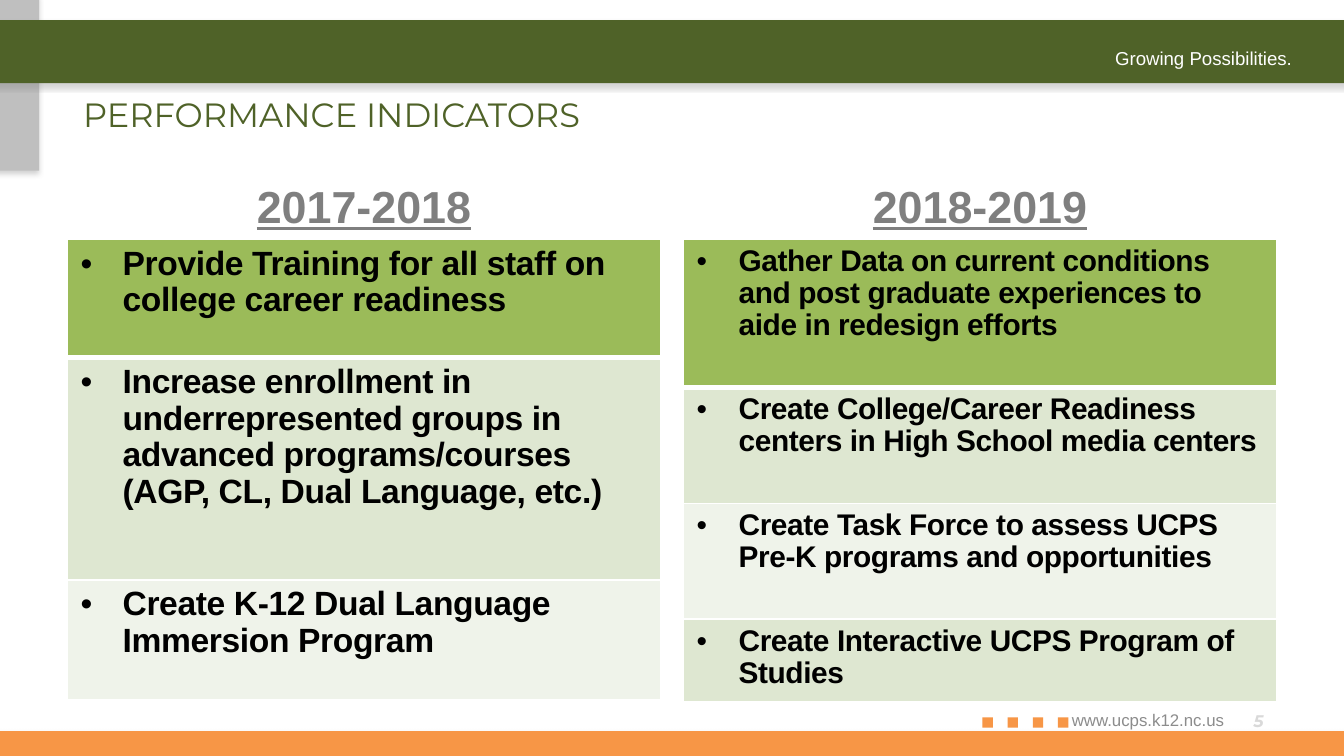
"""Build the performance indicators slide with two yearly tables."""
from lxml import etree
from pptx import Presentation
from pptx import util as u
from pptx.dml.color import RGBColor
from pptx.enum import shapes, text
from pptx.oxml import ns

Pt = u.Pt
GREEN, ORANGE, WHITE = "4F6228", "F79646", "FFFFFF"
ROW_FILLS = ["9BBB59", "DEE7D1", "EFF3EA", "DEE7D1"]


def colour(value):
    return RGBColor.from_string(value)


def child(parent, tag, **attributes):
    return etree.SubElement(parent, ns.qn(tag), {k: str(v) for k, v in attributes.items()})


class Painter:
    def __init__(self, slide, font="Arial"):
        self.slide, self.font = slide, font

    def style(self, span, size, ink, font=None, bold=False, italic=False, underline=False):
        face = span.font
        face.name, face.size = font or self.font, Pt(size)
        face.color.rgb = colour(ink)
        face.bold, face.italic, face.underline = bold, italic, underline

    def bar(self, left, top, width, height, fill, shadow=False):
        box = self.slide.shapes.add_shape(
            shapes.MSO_SHAPE.RECTANGLE, Pt(left), Pt(top), Pt(width), Pt(height))
        box.fill.solid()
        box.fill.fore_color.rgb = colour(fill)
        box.line.fill.background()
        box.shadow.inherit = False
        if shadow:
            effects = box._element.spPr.find(ns.qn("a:effectLst"))
            outer = child(effects, "a:outerShdw", blurRad=Pt(3.1), dist=Pt(1.8),
                          dir=5400000, rotWithShape=0)
            child(child(outer, "a:srgbClr", val="808080"), "a:alpha", val=35000)

    def label(self, left, top, width, height, words, size, ink, align="LEFT",
              anchor="TOP", **looks):
        box = self.slide.shapes.add_textbox(Pt(left), Pt(top), Pt(width), Pt(height))
        frame = box.text_frame
        frame.word_wrap = True
        frame.vertical_anchor = text.MSO_ANCHOR[anchor]
        frame.text = words
        para = frame.paragraphs[0]
        para.alignment = text.PP_ALIGN[align]
        self.style(para.runs[0], size, ink, **looks)

    def borders(self, cell, top, bottom):
        props = cell._tc.get_or_add_tcPr()
        for side, weight in zip("LRTB", (1, 1, top, bottom)):
            line = child(props, f"a:ln{side}", w=Pt(weight))
            child(child(line, "a:solidFill"), "a:srgbClr", val=WHITE)

    def bullet(self, cell, words, size, spacing):
        cell.text = words
        para = cell.text_frame.paragraphs[0]
        para.line_spacing = spacing
        props = para._p.get_or_add_pPr()
        props.set("marL", str(Pt(22.5)))
        props.set("indent", str(-Pt(22.5)))
        child(props, "a:buFont", typeface="Arial")
        child(props, "a:buChar", char="•")
        span = para.runs[0]
        self.style(span, size, "000000", bold=True)
        span._r.get_or_add_rPr().set("spc", "-20")

    def table(self, left, top, width, heights, items, size, spacing):
        frame = self.slide.shapes.add_table(
            len(items), 1, Pt(left), Pt(top), Pt(width), Pt(sum(heights)))
        grid = frame.table
        for i, (height, words) in enumerate(zip(heights, items)):
            grid.rows[i].height = Pt(height)
            cell = grid.cell(i, 0)
            self.borders(cell, 3 if i == 1 else 1, 3 if i == 0 else 1)
            cell.fill.solid()
            cell.fill.fore_color.rgb = colour(ROW_FILLS[i])
            self.bullet(cell, words, size, spacing)


YEARS = [
    ("2017-2018", 36, 18, 0.97, [63.5, 119, 64], [
        "Provide Training for all staff on college career readiness",
        "Increase enrollment in underrepresented groups in advanced programs/courses "
        "(AGP, CL, Dual Language, etc.)",
        "Create K-12 Dual Language Immersion Program"]),
    ("2018-2019", 366, 16, 0.96, [79.5, 62, 62, 43], [
        "Gather Data on current conditions and post graduate experiences to aide in "
        "redesign efforts",
        "Create College/Career Readiness centers in High School media centers",
        "Create Task Force to assess UCPS Pre-K programs and opportunities",
        "Create Interactive UCPS Program of Studies"]),
]


def main():
    deck = Presentation()
    deck.slide_width, deck.slide_height = Pt(720), Pt(405)
    page = Painter(deck.slides.add_slide(deck.slide_layouts[6]))
    page.bar(-3, -3.5, 24, 95, "BFBFBF", shadow=True)
    page.bar(-19.5, 10.8, 750, 33.8, GREEN, shadow=True)
    for i in range(4):
        page.bar(526.3 + 13.5 * i, 384.3, 5.6, 5.6, ORANGE)
    page.bar(-3, 391.7, 723, 13.3, ORANGE, shadow=True)
    page.label(445.7, 21.6, 253.4, 19.4, "Growing Possibilities.", 10, WHITE, "RIGHT")
    page.label(37.5, 46.1, 648, 29.5, "PERFORMANCE INDICATORS", 18, GREEN,
               anchor="MIDDLE", font="Montserrat")
    for year, left, size, spacing, heights, items in YEARS:
        page.label(left, 90.7, 318, 37.5, year, 24, "7F7F7F", "CENTER", "BOTTOM",
                   bold=True, underline=True)
        page.table(left, 128.2, 318, heights, items, size, spacing)
    page.label(437, 376.6, 225.8, 21.6, "www.ucps.k12.nc.us", 9, "8C8C8C", "RIGHT")
    page.label(516.2, 375.1, 167.8, 21.6, "5", 9, "D9D9D9", "RIGHT", "MIDDLE",
               font="Montserrat", bold=True, italic=True)
    deck.save("out.pptx")


if __name__ == "__main__":
    main()
